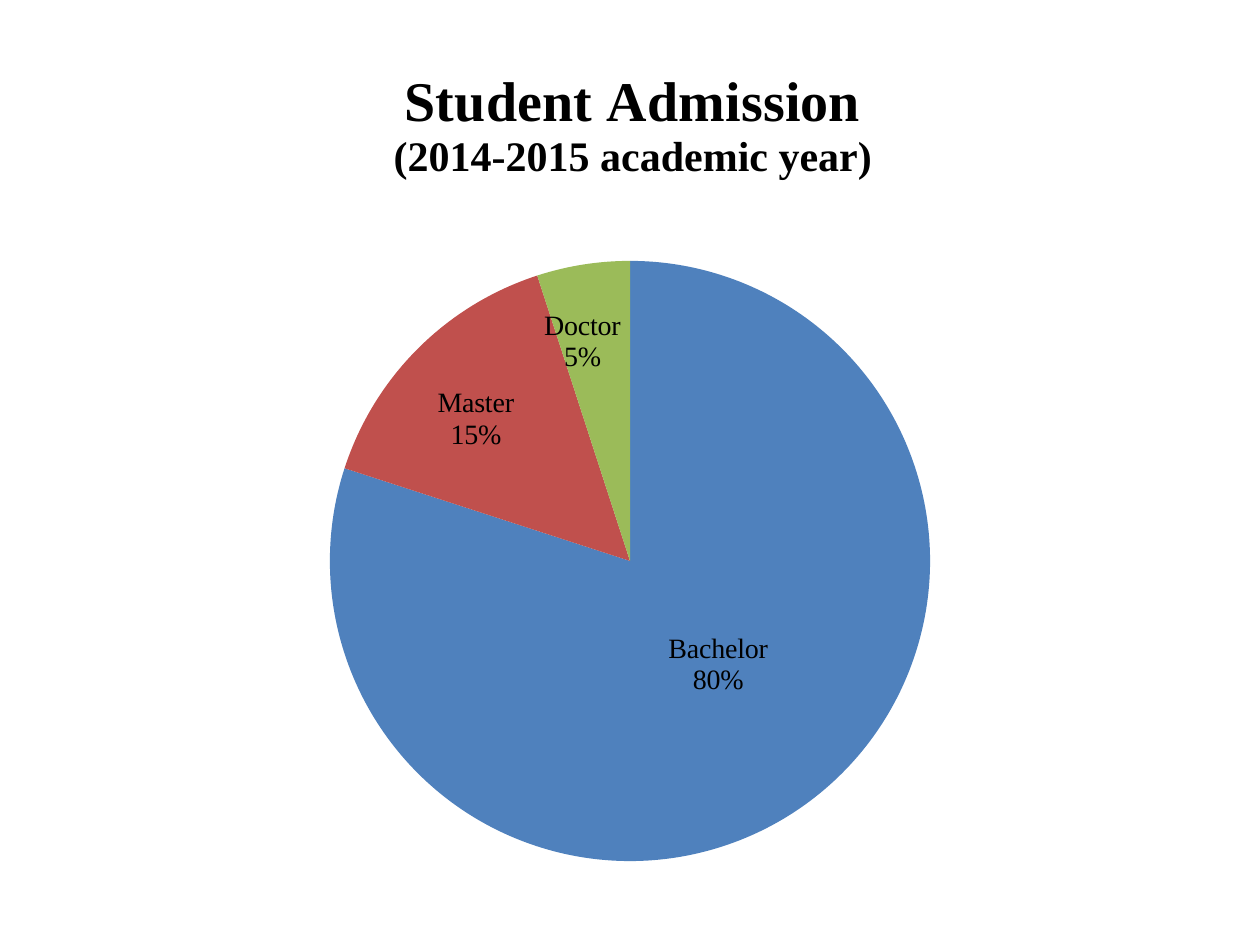
from pptx import Presentation
from pptx import util as u
from pptx.chart.data import CategoryChartData
from pptx.dml.color import RGBColor
from pptx.enum import chart as ch
from pptx.oxml import parse_xml
from pptx.oxml.ns import nsdecls

# Content
HEADING = [("Student Admission", "title"), ("(2014-2015 academic year)", "subtitle")]
# degree, share, slice colour, label shift as a fraction of the chart
DEGREES = [
    ("Bachelor", 80, "blue", (0, -0.02)),
    ("Master", 15, "red", (-0.04, -0.04)),
    ("Doctor", 5, "green", (-0.02, -0.08)),
]
THEME = {
    "font": "Times New Roman",
    "sizes": {"title": 32, "subtitle": 24, "label": 16},
    "colors": {"text": "000000", "blue": "4F81BD", "red": "C0504D", "green": "9BBB59"},
}
SLIDE = (25.4, 19.05)
CHART = (24.2, 17.86)
TITLE_AT = {"x": 0.3, "y": 0.04}
PIE_AT = {"x": 0.25, "y": 0.26, "w": 0.5, "h": 0.68}


def color(role):
    return RGBColor.from_string(THEME["colors"][role])


def style(font, role, bold=False):
    formats = {"name": THEME["font"], "size": u.Pt(THEME["sizes"][role]), "bold": bold}
    for attribute, value in formats.items():
        setattr(font, attribute, value)
    font.color.rgb = color("text")


def layout_xml(places, edge=False, inner=False):
    target = '<c:layoutTarget val="inner"/>' if inner else ""
    modes = '<c:xMode val="edge"/><c:yMode val="edge"/>' if edge else ""
    values = "".join(f'<c:{key} val="{value}"/>' for key, value in places.items())
    return (f'<c:layout {nsdecls("c")}><c:manualLayout>{target}{modes}{values}'
            "</c:manualLayout></c:layout>")


def label_xml(index, shift):
    shown = {"LegendKey": 0, "Val": 0, "CatName": 1, "SerName": 0, "Percent": 1,
             "BubbleSize": 0}
    flags = "".join(f'<c:show{key} val="{value}"/>' for key, value in shown.items())
    return (f'<c:dLbl {nsdecls("c")}><c:idx val="{index}"/>'
            f'{layout_xml(dict(zip("xy", shift)))}<c:dLblPos val="ctr"/>'
            f"{flags}<c:separator>\n</c:separator></c:dLbl>")


def place(parent, places, before, **options):
    for old in parent.xpath("./c:layout"):
        parent.remove(old)
    parent.xpath(before)[0].addprevious(parse_xml(layout_xml(places, edge=True, **options)))


def add_heading(chart):
    frame = chart.chart_title.text_frame
    for number, (line, role) in enumerate(HEADING):
        paragraph = frame.add_paragraph() if number else frame.paragraphs[0]
        run = paragraph.add_run()
        run.text = line
        style(run.font, role, bold=True)
    chart.chart_title.include_in_layout = False
    place(chart.chart_title._element, TITLE_AT, "./c:overlay")


def add_labels(series):
    labels = series.data_labels
    formats = {"show_category_name": True, "show_percentage": True, "show_value": False,
               "number_format": "0%", "number_format_is_linked": False,
               "position": ch.XL_LABEL_POSITION.CENTER}
    for attribute, value in formats.items():
        setattr(labels, attribute, value)
    style(labels.font, "label")
    for index, (*_, shift) in enumerate(DEGREES):
        labels._element.insert(index, parse_xml(label_xml(index, shift)))


def main():
    deck = Presentation()
    deck.slide_width, deck.slide_height = map(u.Cm, SLIDE)
    slide = deck.slides.add_slide(deck.slide_layouts[6])

    # Pie of admissions, centred on the slide
    admissions = CategoryChartData()
    admissions.categories = [degree for degree, *_ in DEGREES]
    admissions.add_series("Admission", [share for _, share, *_ in DEGREES])
    corner = [(whole - part) / 2 for whole, part in zip(SLIDE, CHART)]
    chart = slide.shapes.add_chart(
        ch.XL_CHART_TYPE.PIE, *map(u.Cm, (*corner, *CHART)), admissions).chart
    style(chart.font, "label")
    chart.has_legend = False
    add_heading(chart)

    # Slices and their labels
    pie = chart.plots[0]
    pie.vary_by_categories = True
    series = pie.series[0]
    for index, (_, _, role, _) in enumerate(DEGREES):
        fill = series.points[index].format.fill
        fill.solid()
        fill.fore_color.rgb = color(role)
    add_labels(series)
    plot_area = chart._chartSpace.xpath("./c:chart/c:plotArea")[0]
    place(plot_area, PIE_AT, "./c:pieChart", inner=True)

    deck.save("out.pptx")


if __name__ == "__main__":
    main()
